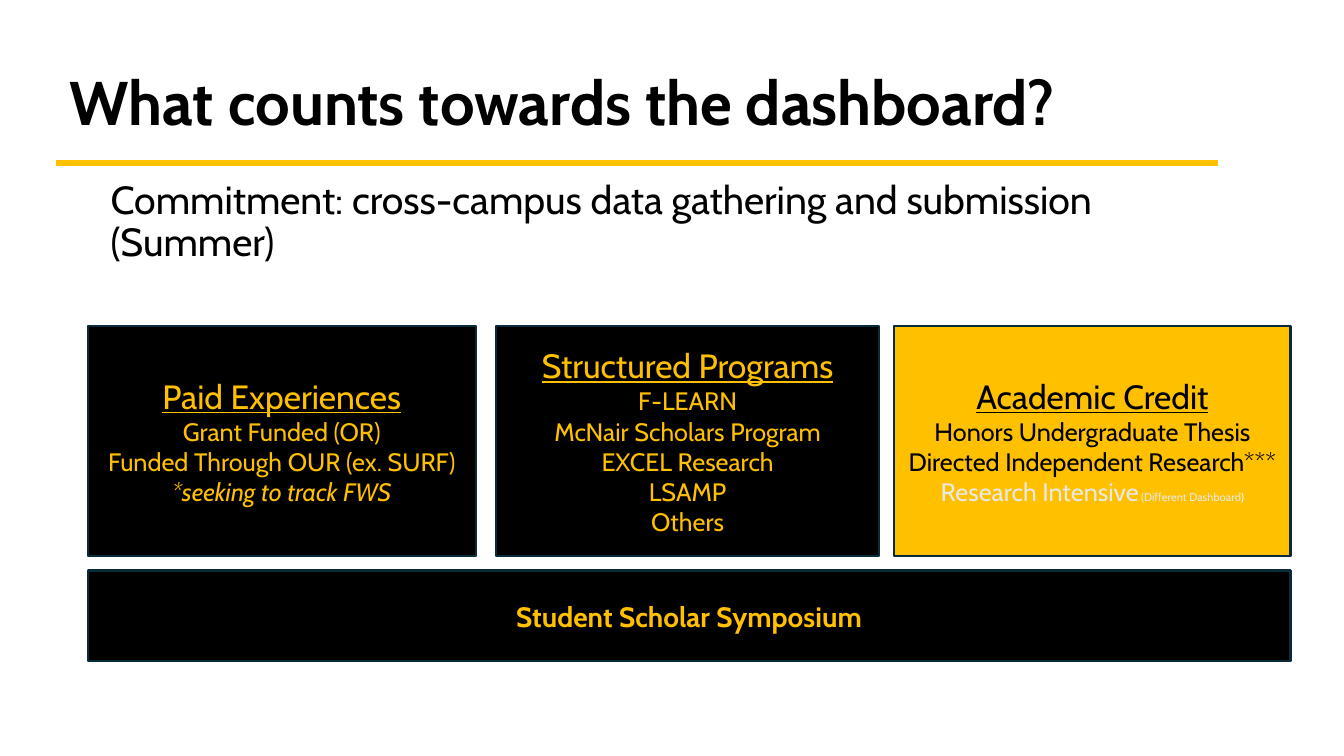
"""Build the slide on what counts towards the dashboard."""
from lxml import etree
from pptx import Presentation
from pptx.dml.color import RGBColor
from pptx.enum import shapes, text
from pptx.oxml import ns
from pptx.util import Inches, Pt

BLACK, GOLD, GREY, WHITE, EDGE = "000000", "FFC000", "E8E8E8", "FFFFFF", "092A39"


def color(value):
    return RGBColor.from_string(value)


def style(font, size, value):
    font.name = "Cabin"
    font.size = Pt(size)
    font.color.rgb = color(value)


presentation = Presentation()
presentation.slide_width = Inches(13.33)
presentation.slide_height = Inches(7.5)
slide = presentation.slides.add_slide(presentation.slide_layouts[6])

headings = [
    ("What counts towards the dashboard?", (0.56, 0, 11.5, 1.45), 44, 0.13, 0.07, text.MSO_ANCHOR.BOTTOM),
    ("Commitment: cross-campus data gathering and submission (Summer)",
     (1, 1.74, 11.33, 1.1), 28, 0.1, 0.05, text.MSO_ANCHOR.TOP),
]
for wording, place, size, side, edge, anchor in headings:
    frame = slide.shapes.add_textbox(*map(Inches, place)).text_frame
    frame.word_wrap = True
    frame.vertical_anchor = anchor
    frame.margin_left = frame.margin_right = Inches(side)
    frame.margin_top = frame.margin_bottom = Inches(edge)
    paragraph = frame.paragraphs[0]
    paragraph.text = wording
    paragraph.line_spacing = 0.9
    style(paragraph.font, size, BLACK)
    paragraph.font.bold = size == 44

rule = slide.shapes.add_connector(
    shapes.MSO_CONNECTOR.STRAIGHT, Inches(0.56), Inches(1.62), Inches(12.08), Inches(1.62))
rule.line.color.rgb = color(GOLD)
rule.line.width = Pt(4.5)
etree.SubElement(rule._element.spPr, ns.qn("a:effectLst"))

boxes = [
    ((0.87, 3.23, 3.85, 2.29), BLACK, GOLD,
     ["Paid Experiences", "Grant Funded (OR)", "Funded Through OUR (ex. SURF)", "*seeking to track FWS"]),
    ((4.92, 3.23, 3.8, 2.29), BLACK, GOLD,
     ["Structured Programs", "F-LEARN", "McNair Scholars Program", "EXCEL Research", "LSAMP", "Others"]),
    ((8.87, 3.23, 3.93, 2.29), GOLD, BLACK,
     ["Academic Credit", "Honors Undergraduate Thesis", "Directed Independent Research***"]),
    ((0.87, 5.66, 11.93, 0.9), BLACK, GOLD, ["Student Scholar Symposium"]),
]
for place, fill, ink, lines in boxes:
    box = slide.shapes.add_shape(shapes.MSO_SHAPE.RECTANGLE, *map(Inches, place))
    box.shadow.inherit = False
    box.fill.solid()
    box.fill.fore_color.rgb = color(fill)
    box.line.color.rgb = color(EDGE)
    box.line.width = Pt(1.5)
    frame = box.text_frame
    frame.word_wrap = True
    frame.vertical_anchor = text.MSO_ANCHOR.MIDDLE
    banner = len(lines) == 1
    for index, line in enumerate(lines):
        paragraph = frame.add_paragraph() if index else frame.paragraphs[0]
        paragraph.text = line
        paragraph.alignment = text.PP_ALIGN.CENTER
        size = 20 if banner else 18 if index else 24
        style(paragraph.font, size, ink)
        paragraph.font.bold = banner
        paragraph.font.underline = index == 0 and not banner
        paragraph.font.italic = line.startswith("*")
    if fill == GOLD:
        paragraph = frame.add_paragraph()
        paragraph.alignment = text.PP_ALIGN.CENTER
        for wording, size, tint in [
            ("Research Intensive", 18, GREY), (" (Different Dashboard", 8, GREY), (")", 8, WHITE),
        ]:
            run = paragraph.add_run()
            run.text = wording
            style(run.font, size, tint)

presentation.save("out.pptx")
